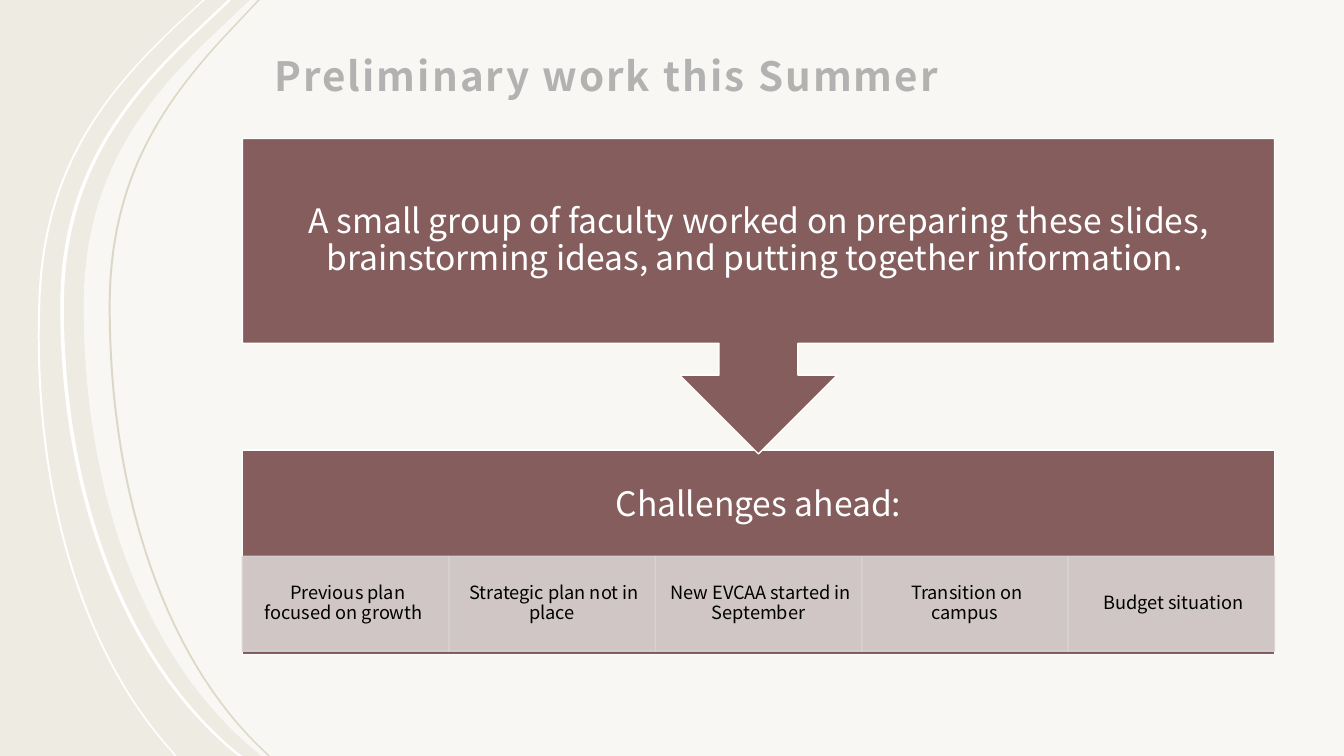
from lxml.etree import SubElement
from pptx import Presentation
from pptx.dml.color import RGBColor
from pptx.enum.shapes import MSO_SHAPE
from pptx.enum.text import MSO_ANCHOR, MSO_AUTO_SIZE, PP_ALIGN
from pptx.oxml.ns import qn
from pptx.util import Cm, Pt

FONT = "Noto Sans CJK JP"
SAND = RGBColor(0xEE, 0xEB, 0xE2)
KHAKI = RGBColor(0xDD, 0xD7, 0xC5)
WHITE = RGBColor(0xFF, 0xFF, 0xFF)
BLACK = RGBColor(0, 0, 0)
CHARCOAL = RGBColor(0x40, 0x40, 0x40)
MAROON = RGBColor(0x85, 0x5D, 0x5D)
PALE_ROSE = RGBColor(0xD9, 0xD2, 0xD2)
SLIDE_WIDTH, SLIDE_HEIGHT = 33.87, 19.05


def paint(shape, fill, outline=None, opacity=100):
    shape.shadow.inherit = False
    shape.fill.solid()
    shape.fill.fore_color.rgb = fill
    if outline is None:
        shape.line.fill.background()
    else:
        shape.line.color.rgb = outline
        shape.line.width = Pt(1)
    if opacity < 100:
        for colour in list(shape._element.spPr.iter(qn("a:srgbClr"))):
            SubElement(colour, qn("a:alpha"), val=str(opacity * 1000))


def write(shape, text, size, colour, side, top, bottom):
    frame = shape.text_frame
    frame.word_wrap = True
    frame.vertical_anchor = MSO_ANCHOR.MIDDLE
    frame.margin_left = frame.margin_right = Cm(side)
    frame.margin_top, frame.margin_bottom = Cm(top), Cm(bottom)
    paragraph = frame.paragraphs[0]
    paragraph.text = text
    paragraph.alignment = PP_ALIGN.CENTER
    paragraph.line_spacing = 0.9
    paragraph.font.name = FONT
    paragraph.font.size = Pt(size)
    paragraph.font.color.rgb = colour


presentation = Presentation()
presentation.slide_width = Cm(SLIDE_WIDTH)
presentation.slide_height = Cm(SLIDE_HEIGHT)
slide = presentation.slides.add_slide(presentation.slide_layouts[5])
slide.background.fill.solid()
slide.background.fill.fore_color.rgb = SAND

swoosh_heights = [0, 0.89, 2.64, 4.55, 7.72, 12.5, 16.69, 19, SLIDE_HEIGHT]
outer_heights = [0, 0.61, 2.36, 4.27, 7.54, 12.19, 16.38, 18.97, SLIDE_HEIGHT]
swooshes = [
    ([6.3, 5.36, 3.53, 2.11, 2.11, 2.11, 3.68, 6.53, 6.58], swoosh_heights, None, WHITE, 60),
    ([5.11, 4.45, 2.59, 1.09, 0.97, 0.79, 1.98, 4.34, 4.39], outer_heights, 0.05, WHITE, 100),
    ([5.74, 4.8, 2.97, 1.52, 1.52, 1.52, 3.12, 5.94, 6.02], swoosh_heights, 0.09, WHITE, 100),
    ([6.5, 5.66, 4.04, 2.74, 2.74, 2.74, 4.17, 6.71, 6.76], swoosh_heights, 0.05, KHAKI, 100),
]
for xs, ys, thickness, colour, opacity in swooshes:
    edge = list(zip(xs, ys))
    curve_starts = [1, 4]
    if thickness is None:
        far_edge = [(SLIDE_WIDTH, SLIDE_HEIGHT), (SLIDE_WIDTH, 0)]
    else:
        far_edge = [(x + thickness, y) for x, y in reversed(edge)]
        curve_starts += [10, 13]
    outline = [(Cm(x), Cm(y)) for x, y in edge + far_edge]
    builder = slide.shapes.build_freeform(*outline[0])
    builder.add_line_segments(outline[1:], close=True)
    swoosh = builder.convert_to_shape()
    segments = list(swoosh._element.spPr.iter(qn("a:lnTo")))
    for start in curve_starts:
        curve = segments[start]
        for segment in segments[start + 1:start + 3]:
            curve.append(segment[0])
            segment.getparent().remove(segment)
        curve.tag = qn("a:cubicBezTo")
    paint(swoosh, colour, opacity=opacity)

title = slide.shapes.title
title.left, title.top, title.width, title.height = Cm(6.61), Cm(1.22), Cm(23.32), Cm(1.55)
heading = title.text_frame
heading.auto_size = MSO_AUTO_SIZE.NONE
heading.word_wrap = True
heading.vertical_anchor = MSO_ANCHOR.BOTTOM
heading.margin_left = heading.margin_right = heading.margin_top = Cm(0.3)
heading.margin_bottom = Cm(0.25)
heading_line = heading.paragraphs[0]
heading_line.alignment = PP_ALIGN.LEFT
heading_line.line_spacing = 1.3
heading_run = heading_line.add_run()
heading_run.text = "Preliminary work this Summer"
heading_run.font.name = FONT
heading_run.font.size = Pt(28.8)
heading_run.font.bold = True
heading_run.font.color.rgb = CHARCOAL
heading_run._r.get_or_add_rPr().set("spc", "150")

diagram_left, diagram_width = 6.11, 26.01
challenges_panel = slide.shapes.add_shape(
    MSO_SHAPE.RECTANGLE, Cm(diagram_left), Cm(11.34), Cm(diagram_width), Cm(5.16))
paint(challenges_panel, MAROON, WHITE)
write(challenges_panel, "Challenges ahead:", 24, WHITE, side=0.48, top=0.48, bottom=2.85)

challenges = [
    " Previous plan focused on growth ",
    " Strategic plan not in place",
    " New EVCAA started in September",
    " Transition on\vcampus",
    " Budget situation",
]
challenge_width = diagram_width / len(challenges)
for column, challenge in enumerate(challenges):
    challenge_cell = slide.shapes.add_shape(
        MSO_SHAPE.RECTANGLE, Cm(diagram_left + column * challenge_width), Cm(14.02),
        Cm(challenge_width), Cm(2.39))
    paint(challenge_cell, PALE_ROSE, PALE_ROSE, opacity=90)
    write(challenge_cell, challenge, 13, BLACK, side=0.25, top=0.05, bottom=0.05)

summer_work = slide.shapes.add_shape(
    MSO_SHAPE.DOWN_ARROW_CALLOUT, Cm(diagram_left), Cm(3.49), Cm(diagram_width), Cm(7.95))
paint(summer_work, MAROON, WHITE)
write(summer_work,
      "A small group of faculty worked on preparing these slides, "
      "brainstorming ideas, and putting together information. ",
      24, WHITE, side=0.48, top=0.48, bottom=0.48)

presentation.save("out.pptx")
